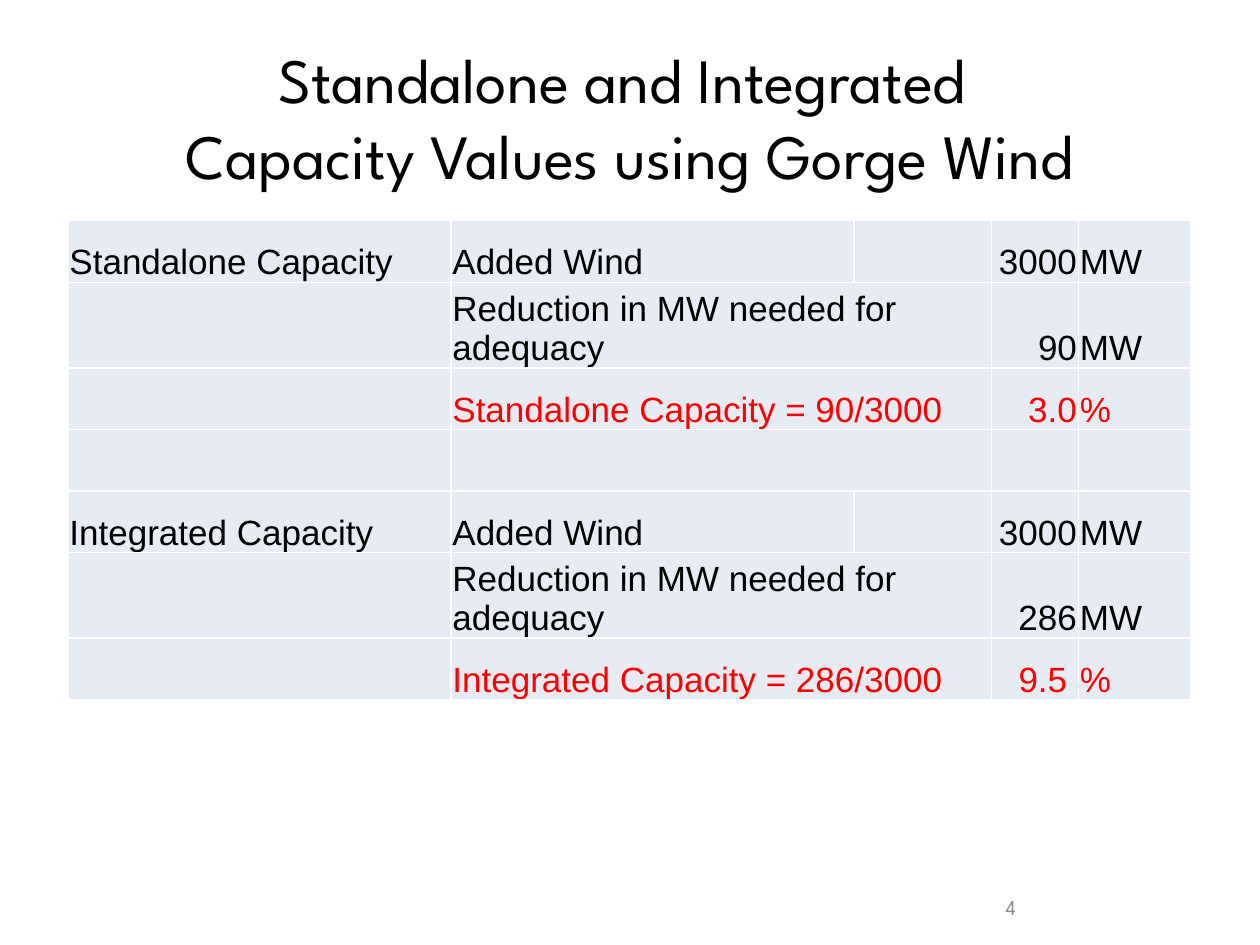
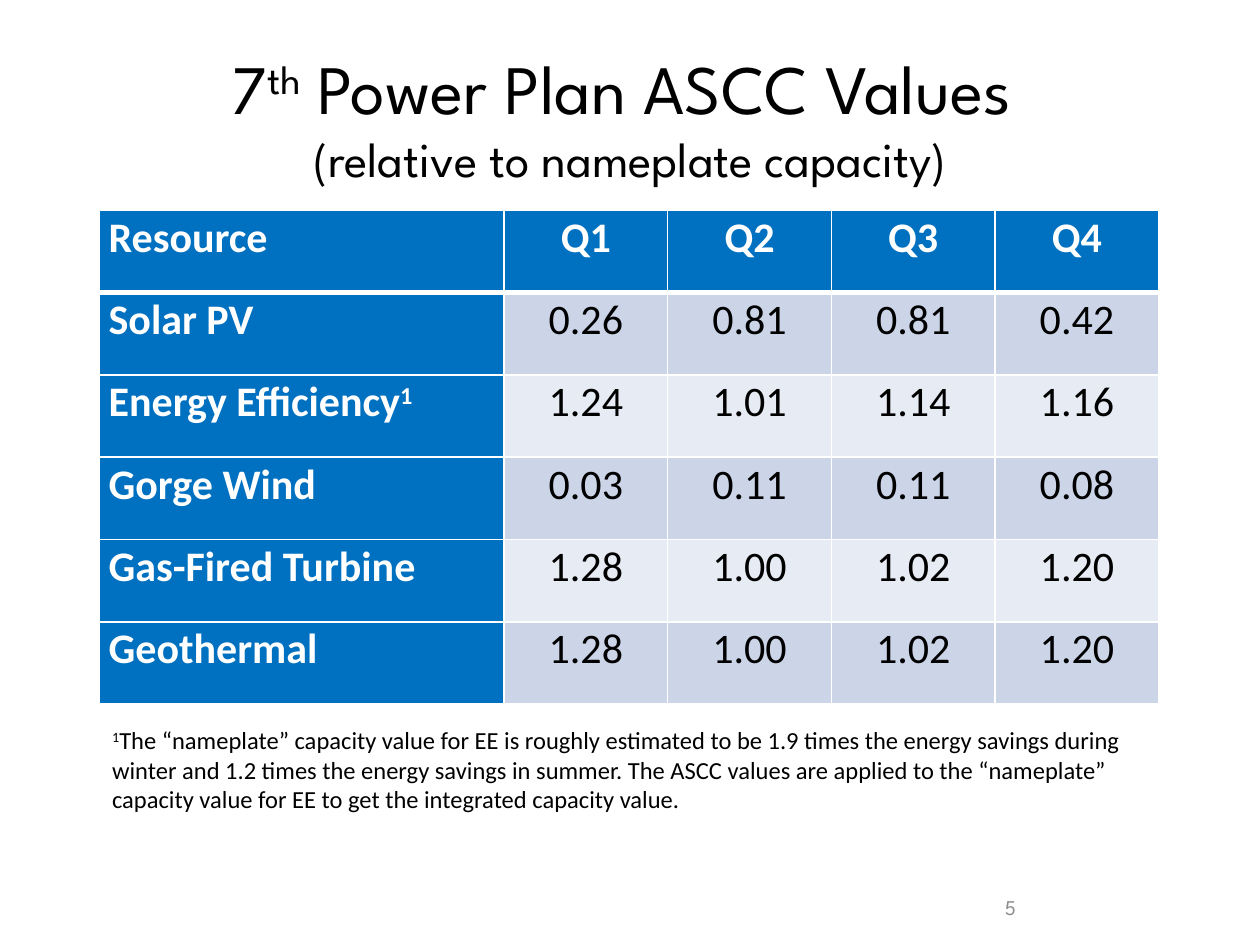
"""Build two slides on standalone and integrated capacity values."""
import pptx
import pptx.dml.color
import pptx.enum.text
import pptx.oxml.ns
import pptx.util
from lxml import etree

Cm, Pt = pptx.util.Cm, pptx.util.Pt
ALIGN, ANCHOR = pptx.enum.text.PP_ALIGN, pptx.enum.text.MSO_ANCHOR

COLORS = {"black": "000000", "white": "FFFFFF", "red": "FF0000", "grey": "8C8C8C",
          "blue": "0070C0", "dark_band": "CCD5E8", "light_band": "E7EBF4"}
TITLE_FONT, BODY_FONT, CAPACITY_FONT = "League Spartan", "Calibri", "Arial"
BREAK, SUPER = "\n", "super"

CAPACITY_TITLE = [("Standalone and Integrated ", 36), BREAK,
                  ("Capacity Values using Gorge Wind", 36)]
CAPACITY_ROWS = [
    ("Standalone Capacity", "Added Wind", "", "3000", "MW"),
    ("", "Reduction in MW needed for adequacy", None, "90", "MW"),
    ("", "Standalone Capacity = 90/3000", None, "3.0", "%"),
    ("", "", None, "", ""),
    ("Integrated Capacity", "Added Wind", "", "3000", "MW"),
    ("", "Reduction in MW needed for adequacy", None, "286", "MW"),
    ("", "Integrated Capacity = 286/3000", None, "9.5 ", "%"),
]
CAPACITY_COLS = [7.72, 8.13, 2.77, 1.75, 2.26]

ASCC_TITLE = [("7", 39.6), ("th", 39.6, SUPER), (" Power Plan ASCC Values ", 39.6), BREAK,
              ("(relative to nameplate capacity)", 27.9)]
ASCC_ROWS = [
    ("Resource", "Q1", "Q2", "Q3", "Q4"),
    ("Solar PV", "0.26", "0.81", "0.81", "0.42"),
    ("Energy Efficiency", "1.24", "1.01", "1.14", "1.16"),
    ("Gorge Wind", "0.03", "0.11", "0.11", "0.08"),
    ("Gas-Fired Turbine", "1.28", "1.00", "1.02", "1.20"),
    ("Geothermal", "1.28", "1.00", "1.02", "1.20"),
]
ASCC_COLS = [8.15] + [3.3] * 4
FOOTNOTE_MARKS = {"Energy Efficiency": "1"}
FOOTNOTE = [("1", 14, SUPER),
            ("The “nameplate” capacity value for EE is roughly estimated to be 1.9 times the "
             "energy savings during winter and 1.2 times the energy savings in summer. The ASCC "
             "values are applied to the “nameplate” capacity value for EE to get the integrated "
             "capacity value.", 14)]


def rgb(name):
    return pptx.dml.color.RGBColor.from_string(COLORS[name])


def write(p, pieces, font, color, align=ALIGN.LEFT, bold=False):
    p.alignment = align
    for piece in pieces:
        if piece == BREAK:
            p.add_line_break()
            continue
        text, size, *marks = piece
        r = p.add_run()
        r.text = text
        r.font.name, r.font.size, r.font.bold = font, Pt(size), bold
        r.font.color.rgb = rgb(color)
        if SUPER in marks:
            r._r.get_or_add_rPr().set("baseline", "30000")


def add_text(s, box, pieces, font, color, align=ALIGN.LEFT, anchor=ANCHOR.MIDDLE):
    tf = s.shapes.add_textbox(*map(Cm, box)).text_frame
    tf.word_wrap = True
    tf.vertical_anchor = anchor
    write(tf.paragraphs[0], pieces, font, color, align)


def add_slide(prs, title, title_left, number):
    s = prs.slides.add_slide(prs.slide_layouts[6])
    add_text(s, (title_left, 0.76, 25.4 - 2 * title_left, 3.18), title,
             TITLE_FONT, "black", ALIGN.CENTER)
    add_text(s, (14.81, 17.78, 5.92, 1.02), [(str(number), 12)],
             TITLE_FONT, "grey", ALIGN.RIGHT)
    return s


def add_table(s, left, top, cols, row_height, rows):
    table = s.shapes.add_table(len(rows), len(cols), Cm(left), Cm(top),
                               Cm(sum(cols)), Cm(row_height * len(rows))).table
    table.first_row = table.horz_banding = False
    for col, width in zip(table.columns, cols):
        col.width = Cm(width)
    return table


def style_cell(cell, fill, margins, anchor, top=1, bottom=1):
    tc_pr = cell._tc.get_or_add_tcPr()
    for side, width in (("L", 1), ("R", 1), ("T", top), ("B", bottom)):
        ln = etree.SubElement(tc_pr, pptx.oxml.ns.qn("a:ln" + side), w=str(Pt(width)))
        solid = etree.SubElement(ln, pptx.oxml.ns.qn("a:solidFill"))
        etree.SubElement(solid, pptx.oxml.ns.qn("a:srgbClr"), val=COLORS["white"])
    cell.fill.solid()
    cell.fill.fore_color.rgb = rgb(fill)
    cell.margin_left, cell.margin_right, cell.margin_top, cell.margin_bottom = map(Cm, margins)
    cell.vertical_anchor = anchor


def build_capacity(prs):
    s = add_slide(prs, CAPACITY_TITLE, 0.64, 4)
    table = add_table(s, 1.37, 4.45, CAPACITY_COLS, 1.24, CAPACITY_ROWS)
    for i, row in enumerate(CAPACITY_ROWS):
        color = "red" if "=" in row[1] else "black"
        for j, text in enumerate(row):
            cell = table.cell(i, j)
            style_cell(cell, "light_band", (0.03, 0.03, 0.03, 0), ANCHOR.BOTTOM)
            if text:
                write(cell.text_frame.paragraphs[0], [(text, 20)], CAPACITY_FONT, color,
                      ALIGN.RIGHT if j == 3 else ALIGN.LEFT)
        if row[2] is None:
            table.cell(i, 1).merge(table.cell(i, 2))


def build_ascc(prs):
    s = add_slide(prs, ASCC_TITLE, 1.27, 5)
    table = add_table(s, 2.01, 4.24, ASCC_COLS, 1.66, ASCC_ROWS)
    for i, row in enumerate(ASCC_ROWS):
        for j, text in enumerate(row):
            cell = table.cell(i, j)
            header = i == 0 or j == 0
            fill = "blue" if header else ("light_band", "dark_band")[i % 2]
            style_cell(cell, fill, (0.18, 0.18, 0, 0), ANCHOR.MIDDLE,
                       top=3 if i == 1 else 1, bottom=3 if i == 0 else 1)
            p = cell.text_frame.paragraphs[0]
            p.line_spacing, p.space_after = Pt(14), Pt(6)
            pieces = [(text, 24)]
            if text in FOOTNOTE_MARKS:
                pieces.append((FOOTNOTE_MARKS[text], 24, SUPER))
            write(p, pieces, BODY_FONT, "white" if header else "black",
                  ALIGN.CENTER if j else ALIGN.LEFT, header)
    add_text(s, (2.01, 14.5, 22.23, 2.06), FOOTNOTE, BODY_FONT, "black", anchor=ANCHOR.TOP)


def main():
    prs = pptx.Presentation()
    prs.slide_width, prs.slide_height = Cm(25.4), Cm(19.05)
    build_capacity(prs)
    build_ascc(prs)
    prs.save("out.pptx")


if __name__ == "__main__":
    main()
